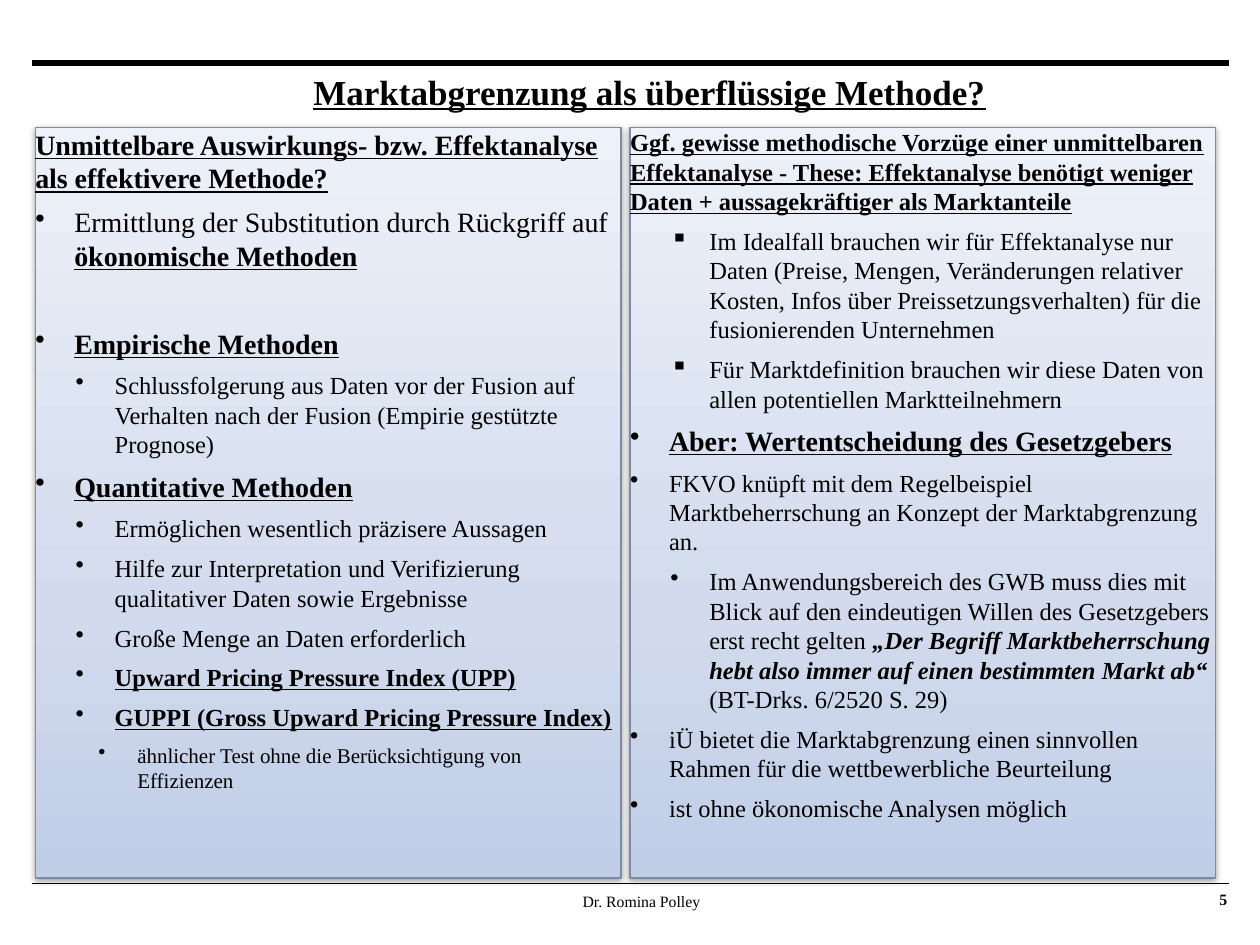
from lxml.etree import SubElement
from pptx import Presentation
from pptx.dml.color import RGBColor
from pptx.enum.shapes import MSO_CONNECTOR as Connector, MSO_SHAPE as Shape
from pptx.enum.text import MSO_ANCHOR as Anchor, PP_ALIGN as Align
from pptx.oxml import parse_xml
from pptx.oxml.ns import nsdecls, qn
from pptx.util import Inches, Pt

COLORS = {"text": "000000", "rule": "000000", "border": "7B8CA6", "shadow": "000000",
          "bottom": "BFCDE7", "middle": "D2DBED", "top": "EDF1F9"}
FONT = "Times New Roman"
COLUMNS, ROWS = 40, 30
INDENTS = [0.31, 0.63, 0.81]
HANGING = 0.31
DOT, SQUARE = "•", "▪"


def color(name):
    return RGBColor.from_string(COLORS[name])


def add_text(paragraph, text, size=14, style=""):
    """Append a run; style holds any of the letters b, i and u."""
    run = paragraph.add_run()
    run.text = text
    font = run.font
    font.name, font.size = FONT, Pt(size)
    font.bold, font.italic, font.underline = (letter in style for letter in "biu")
    font.color.rgb = color("text")


def add_bullet(paragraph, mark, level, indent):
    paragraph.level = level
    properties = paragraph._p.get_or_add_pPr()
    properties.set("marL", str(Inches(indent)))
    properties.set("indent", str(-Inches(HANGING)))
    SubElement(properties, qn("a:buChar")).set("char", mark)


def gradient_fill():
    stops = "".join(
        f'<a:gs pos="{position * 1000}"><a:srgbClr val="{COLORS[name]}"/></a:gs>'
        for position, name in [(0, "bottom"), (35, "middle"), (100, "top")])
    return parse_xml(f'<a:gradFill {nsdecls("a")} rotWithShape="1"><a:gsLst>{stops}</a:gsLst>'
                     '<a:lin ang="16200000" scaled="0"/></a:gradFill>')


def soft_shadow():
    return parse_xml(
        f'<a:effectLst {nsdecls("a")}><a:outerShdw blurRad="{Pt(3.1)}" dist="{Pt(1.6)}" '
        f'dir="5400000" rotWithShape="0"><a:srgbClr val="{COLORS["shadow"]}">'
        '<a:alpha val="38000"/></a:srgbClr></a:outerShdw></a:effectLst>')


class SlideBuilder:
    """Places elements on a grid of COLUMNS by ROWS."""

    def __init__(self, presentation):
        self.column = presentation.slide_width / COLUMNS
        self.row = presentation.slide_height / ROWS
        self.slide = presentation.slides.add_slide(presentation.slide_layouts[6])

    def place(self, left, top, width, height):
        return (round(left * self.column), round(top * self.row),
                round(width * self.column), round(height * self.row))

    def prepare_frame(self, shape, anchor):
        frame = shape.text_frame
        frame.word_wrap = True
        frame.vertical_anchor = anchor
        frame.margin_left = frame.margin_right = frame.margin_top = frame.margin_bottom = 0
        return frame

    def label(self, box, text, align=Align.CENTER, **text_format):
        shape = self.slide.shapes.add_textbox(*self.place(*box))
        paragraph = self.prepare_frame(shape, Anchor.MIDDLE).paragraphs[0]
        paragraph.alignment = align
        add_text(paragraph, text, **text_format)

    def rule(self, row, weight):
        left, top, width, _ = self.place(1, row, COLUMNS - 2, 0)
        line = self.slide.shapes.add_connector(
            Connector.STRAIGHT, left, top, left + width, top)
        line.line.color.rgb = color("rule")
        line.line.width = Pt(weight)
        SubElement(line._element.spPr, qn("a:effectLst"))

    def panel(self, left, entries):
        shape = self.slide.shapes.add_shape(
            Shape.RECTANGLE, *self.place(left, 4.04, 18.6, 23.84))
        shape.line.color.rgb = color("border")
        shape.line.width = Pt(0.75)
        properties = shape._element.spPr
        properties.find(qn("a:ln")).addprevious(gradient_fill())
        properties.append(soft_shadow())
        frame = self.prepare_frame(shape, Anchor.TOP)
        for index, (level, mark, size, space_after, runs) in enumerate(entries):
            paragraph = frame.add_paragraph() if index else frame.paragraphs[0]
            paragraph.alignment = Align.LEFT
            paragraph.space_after = Pt(space_after)
            if mark:
                add_bullet(paragraph, mark, level, INDENTS[level])
            for text, style in runs:
                add_text(paragraph, text, size=size, style=style)


def entry(text, level=0, mark=DOT, size=14, style="", space_after=6, more=()):
    """One panel paragraph; more holds further (text, style) runs."""
    return level, mark, size, space_after, [(text, style), *more]


METHODS = [
    entry("Unmittelbare Auswirkungs- bzw. Effektanalyse als effektivere Methode?",
          mark=None, size=16, style="bu"),
    entry("Ermittlung der Substitution durch Rückgriff auf ", size=16, space_after=31,
          more=[("ökonomische Methoden", "bu")]),
    entry("Empirische Methoden", size=16, style="bu"),
    entry("Schlussfolgerung aus Daten vor der Fusion auf Verhalten nach der Fusion "
          "(Empirie gestützte Prognose)", level=1),
    entry("Quantitative Methoden", size=16, style="bu"),
    entry("Ermöglichen wesentlich präzisere Aussagen", level=1),
    entry("Hilfe zur Interpretation und Verifizierung qualitativer Daten sowie Ergebnisse",
          level=1),
    entry("Große Menge an Daten erforderlich", level=1),
    entry("Upward Pricing Pressure Index (UPP)", level=1, style="bu"),
    entry("GUPPI (Gross Upward Pricing Pressure Index)", level=1, style="bu"),
    entry("ähnlicher Test ohne die Berücksichtigung von Effizienzen", level=2, size=12),
]

ASSESSMENT = [
    entry("Ggf. gewisse methodische Vorzüge einer unmittelbaren Effektanalyse - These: "
          "Effektanalyse benötigt weniger Daten + aussagekräftiger als Marktanteile",
          mark=None, style="bu"),
    entry("Im Idealfall brauchen wir für Effektanalyse nur Daten (Preise, Mengen, "
          "Veränderungen relativer Kosten, Infos über Preissetzungsverhalten) für die "
          "fusionierenden Unternehmen", level=1, mark=SQUARE),
    entry("Für Marktdefinition brauchen wir diese Daten von allen potentiellen "
          "Marktteilnehmern", level=1, mark=SQUARE),
    entry("Aber: Wertentscheidung des Gesetzgebers", size=16, style="bu"),
    entry("FKVO knüpft mit dem Regelbeispiel Marktbeherrschung an Konzept der "
          "Marktabgrenzung an."),
    entry("Im Anwendungsbereich des GWB muss dies mit Blick auf den eindeutigen Willen "
          "des Gesetzgebers erst recht gelten ", level=1,
          more=[("„Der Begriff Marktbeherrschung hebt also immer auf einen bestimmten "
                 "Markt ab“ ", "bi"), ("(BT-Drks. 6/2520 S. 29)", "")]),
    entry("iÜ bietet die Marktabgrenzung einen sinnvollen Rahmen für die "
          "wettbewerbliche Beurteilung"),
    entry("ist ohne ökonomische Analysen möglich"),
]


def main():
    presentation = Presentation()
    presentation.slide_width, presentation.slide_height = Inches(10), Inches(7.5)
    builder = SlideBuilder(presentation)
    builder.rule(2, 3)
    builder.rule(28.04, 0.5)
    builder.label((36.32, 28.04, 2.64, 1.04), "5", align=Align.RIGHT, size=9, style="b")
    builder.label((6.32, 28.2, 28.08, 0.8), "Dr. Romina Polley", size=9)
    builder.panel(1.12, METHODS)
    builder.panel(20, ASSESSMENT)
    builder.label((1.72, 2.1, 37.8, 1.6), "Marktabgrenzung als überflüssige Methode?",
                  size=20, style="bu")
    presentation.save("out.pptx")


if __name__ == "__main__":
    main()
